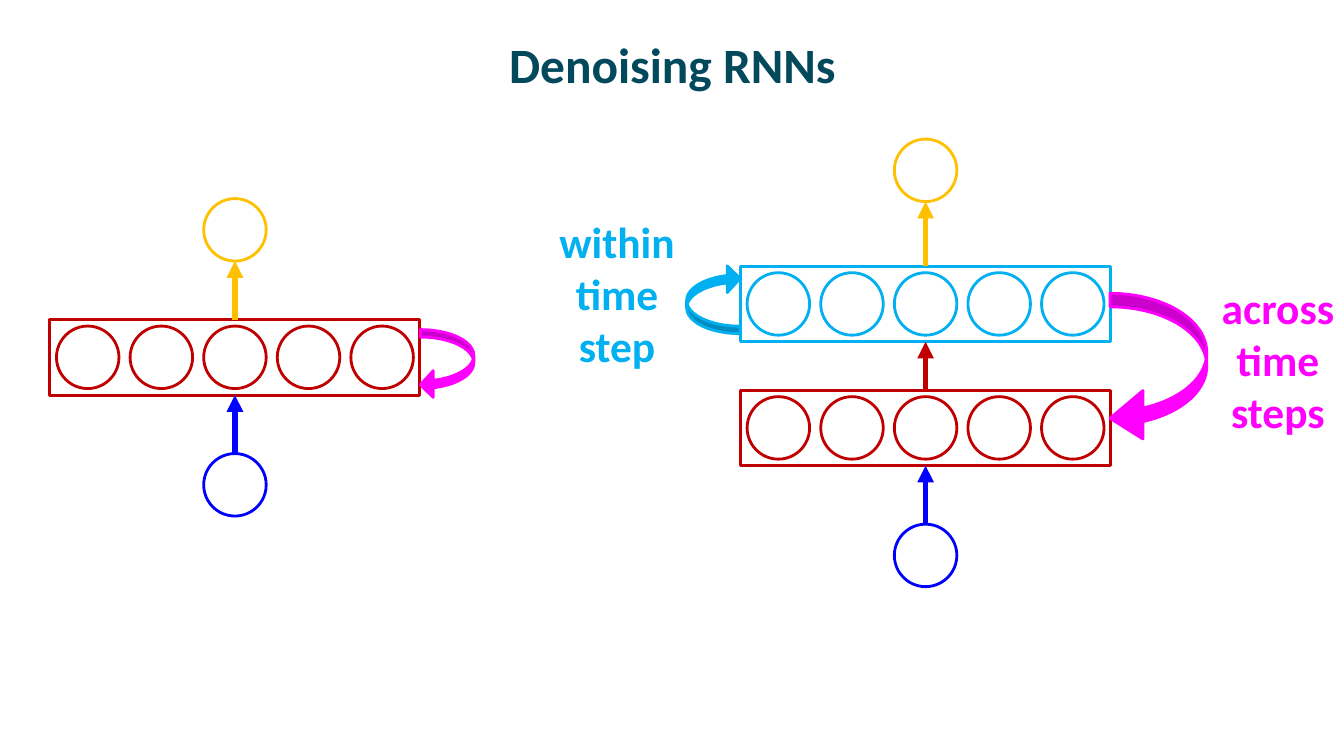
from dataclasses import dataclass

from pptx import Presentation
from pptx.dml.color import RGBColor
from pptx.enum.shapes import MSO_CONNECTOR, MSO_SHAPE
from pptx.enum.text import MSO_ANCHOR, PP_ALIGN
from pptx.oxml.ns import qn
from pptx.oxml.xmlchemy import OxmlElement
from pptx.shapes.autoshape import Shape
from pptx.shapes.shapetree import GroupShapes
from pptx.util import Inches, Pt


@dataclass(frozen=True)
class Theme:
    font: str = "Calibri"
    title: str = "03495C"
    input: str = "0000FF"
    hidden: str = "C00000"
    denoise: str = "00B0F0"
    output: str = "FFC000"
    recurrent: str = "FF00FF"
    title_size: float = 35.3
    label_size: float = 31
    outline: float = 2
    arrow: float = 4


@dataclass(frozen=True)
class Layer:
    top: float
    color: str
    units: int = 1


@dataclass(frozen=True)
class Arrow:
    start: float
    end: float
    color: str


@dataclass(frozen=True)
class Loop:
    left: float
    top: float
    width: float
    height: float
    color: str
    head: float = 0.24
    rotation: float = 0


@dataclass(frozen=True)
class Label:
    left: float
    top: float
    width: float
    height: float
    lines: tuple[str, ...]
    color: str
    size: float


@dataclass(frozen=True)
class Network:
    center: float
    layers: tuple[Layer, ...]
    arrows: tuple[Arrow, ...]
    loops: tuple[Loop, ...]
    labels: tuple[Label, ...] = ()


THEME = Theme()
UNIT = 0.62          # circle diameter
PITCH = 0.73         # distance between circle centres
BOX_W, BOX_H = 3.67, 0.75

NETWORKS = (
    Network(
        2.33,
        (Layer(4.5, THEME.input), Layer(3.17, THEME.hidden, 5), Layer(1.97, THEME.output)),
        (Arrow(3.17, 2.59, THEME.output), Arrow(4.5, 3.92, THEME.input)),
        (Loop(4.17, 3.27, 0.53, 0.68, THEME.recurrent),),
    ),
    Network(
        9.18,
        (Layer(5.2, THEME.input), Layer(3.87, THEME.hidden, 5),
         Layer(2.64, THEME.denoise, 5), Layer(1.38, THEME.output)),
        (Arrow(2.64, 2, THEME.output), Arrow(5.2, 4.62, THEME.input),
         Arrow(3.87, 3.39, THEME.hidden)),
        (Loop(11.01, 2.91, 0.96, 1.48, THEME.recurrent, head=0.34),
         Loop(6.81, 2.63, 0.53, 0.68, THEME.denoise, rotation=180)),
        (Label(5.44, 2.07, 1.36, 1.67, ("within", "time", "step"),
               THEME.denoise, THEME.label_size),
         Label(12.01, 2.73, 1.33, 1.67, ("across", "time", "steps"),
               THEME.recurrent, THEME.label_size)),
    ),
)


def add_outline(shapes: GroupShapes, kind: MSO_SHAPE, left: float, top: float,
                width: float, height: float, color: str) -> Shape:
    sp = shapes.add_shape(kind, Inches(left), Inches(top), Inches(width), Inches(height))
    sp.shadow.inherit = False
    sp.fill.background()
    sp.line.color.rgb = RGBColor.from_string(color)
    sp.line.width = Pt(THEME.outline)
    return sp


def add_layer(shapes: GroupShapes, layer: Layer, center: float) -> None:
    top = layer.top
    if layer.units > 1:
        add_outline(shapes, MSO_SHAPE.RECTANGLE, center - BOX_W / 2, top,
                    BOX_W, BOX_H, layer.color)
        top += (BOX_H - UNIT) / 2
    first = center - UNIT / 2 - PITCH * (layer.units - 1) / 2
    for i in range(layer.units):
        add_outline(shapes, MSO_SHAPE.OVAL, first + i * PITCH, top, UNIT, UNIT, layer.color)


def add_arrow(shapes: GroupShapes, arrow: Arrow, x: float) -> None:
    cxn = shapes.add_connector(MSO_CONNECTOR.STRAIGHT, Inches(x), Inches(arrow.start),
                               Inches(x), Inches(arrow.end))
    cxn.line.color.rgb = RGBColor.from_string(arrow.color)
    cxn.line.width = Pt(THEME.arrow)
    # Arrowhead and no shadow
    props = cxn._element.spPr
    tail = OxmlElement("a:tailEnd")
    tail.set("type", "triangle")
    props.find(qn("a:ln")).append(tail)
    props.append(OxmlElement("a:effectLst"))


def add_loop(shapes: GroupShapes, loop: Loop) -> None:
    sp = add_outline(shapes, MSO_SHAPE.CURVED_LEFT_ARROW, loop.left, loop.top,
                     loop.width, loop.height, loop.color)
    sp.fill.solid()
    sp.fill.fore_color.rgb = RGBColor.from_string(loop.color)
    for i, value in enumerate((0.14, 0.5, loop.head)):
        sp.adjustments[i] = value
    sp.rotation = loop.rotation


def add_label(shapes: GroupShapes, label: Label) -> None:
    sp = shapes.add_textbox(Inches(label.left), Inches(label.top),
                            Inches(label.width), Inches(label.height))
    tf = sp.text_frame
    tf.word_wrap = False
    tf.vertical_anchor = MSO_ANCHOR.MIDDLE
    tf.text = "\n".join(label.lines)
    for p in tf.paragraphs:
        p.alignment = PP_ALIGN.CENTER
        p.font.name = THEME.font
        p.font.size = Pt(label.size)
        p.font.bold = True
        p.font.color.rgb = RGBColor.from_string(label.color)


def add_network(shapes: GroupShapes, net: Network) -> None:
    for layer in net.layers:
        add_layer(shapes, layer, net.center)
    for arrow in net.arrows:
        add_arrow(shapes, arrow, net.center)
    for loop in net.loops:
        add_loop(shapes, loop)
    for label in net.labels:
        add_label(shapes, label)


def main() -> None:
    prs = Presentation()
    prs.slide_width, prs.slide_height = Inches(13.33), Inches(7.5)
    s = prs.slides.add_slide(prs.slide_layouts[6])

    # Title
    add_label(s.shapes, Label(0.67, 0.17, 12, 0.92, ("Denoising RNNs",),
                              THEME.title, THEME.title_size))

    # Plain network on the left, denoising network on the right
    for net in NETWORKS:
        add_network(s.shapes.add_group_shape().shapes, net)

    prs.save("out.pptx")


if __name__ == "__main__":
    main()
